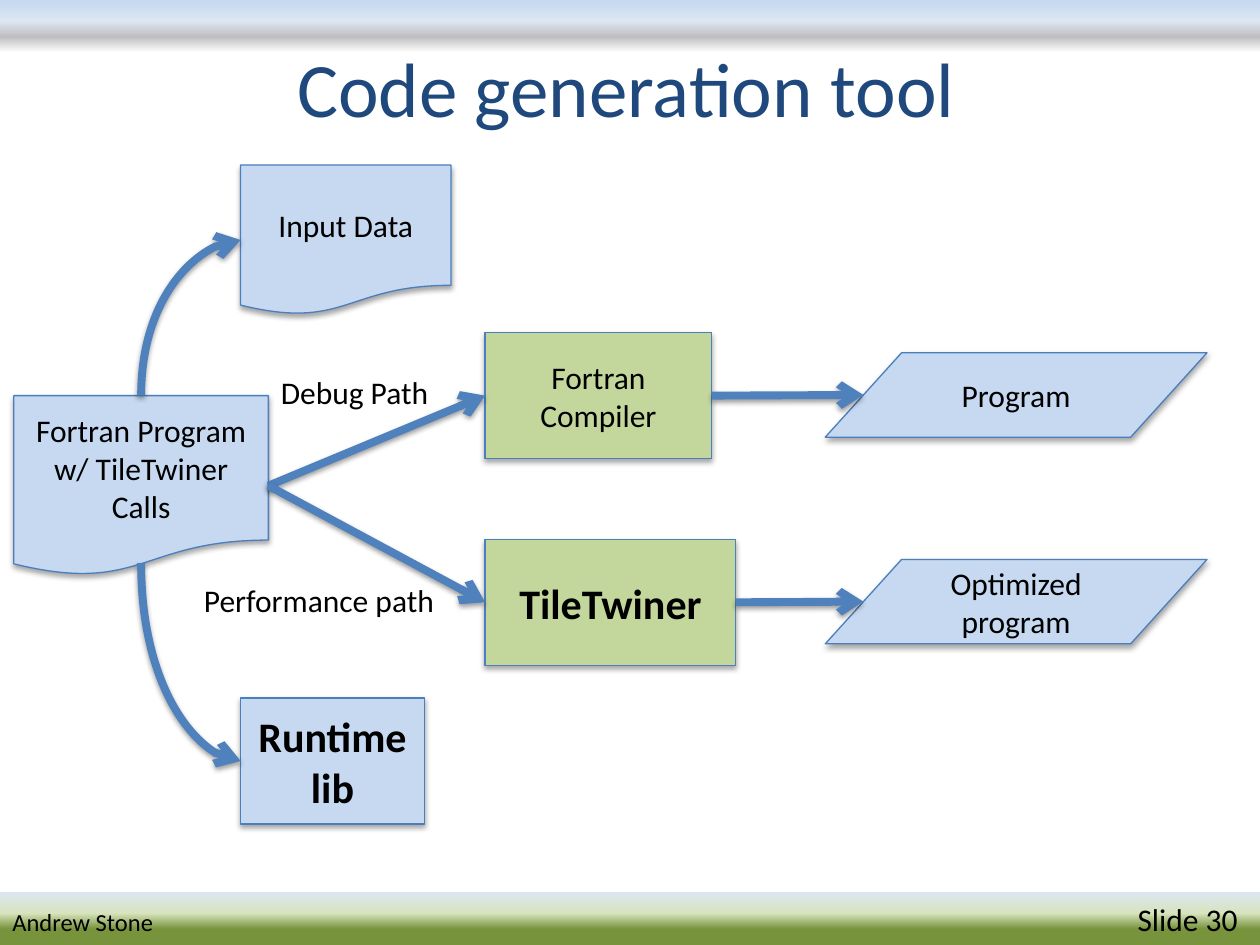
from lxml import etree
from pptx import Presentation
from pptx.dml.color import RGBColor
from pptx.enum.shapes import MSO_CONNECTOR as LINK, MSO_SHAPE as SHAPE
from pptx.enum.text import MSO_ANCHOR as ANCHOR, MSO_AUTO_SIZE as FIT, PP_ALIGN as ALIGN
from pptx.oxml.ns import qn
from pptx.util import Emu, Inches, Pt

COLORS = {
    "title": "1F497D", "text": "000000", "data": "C6D9F1", "tool": "C3D69B",
    "outline": "4B7EBC", "arrow": "4F81BD", "shadow": "000000",
}
HEADER_STOPS = [(0, "C6D9F1"), (40, "DCE6F2"), (70, "BFBFBF"), (100, "FFFFFF")]
FOOTER_STOPS = [(0, "DCE6F2"), (40, "D7E4BD"), (70, "77933C")]
TOP, LEFT, BOTTOM, RIGHT = range(4)
SLANT_LEFT = 2  # connection site on the left edge of a parallelogram


def rgb(name):
    return RGBColor.from_string(COLORS[name])


def add_xml(parent, tag, **attributes):
    child = etree.SubElement(parent, qn(tag))
    for key, value in attributes.items():
        child.set(key, str(value))
    return child


def style_run(run, size, color="text", bold=False):
    run.font.name = "Calibri"
    run.font.size = Pt(size)
    run.font.bold = bold
    run.font.color.rgb = rgb(color)


def add_shadow(shape, distance, opacity):
    shape_properties = shape._element.spPr
    effects = shape_properties.find(qn("a:effectLst"))
    if effects is None:
        effects = add_xml(shape_properties, "a:effectLst")
    shadow = add_xml(effects, "a:outerShdw", blurRad=Pt(3.15), dist=Pt(distance),
                     dir=5400000, rotWithShape=0)
    color = add_xml(shadow, "a:srgbClr", val=COLORS["shadow"])
    add_xml(color, "a:alpha", val=opacity * 1000)


def add_band(slide, box, stops):
    """Add a borderless bar with a gradient running from top to bottom."""
    band = slide.shapes.add_shape(SHAPE.RECTANGLE, *map(Inches, box))
    band.shadow.inherit = False
    band.line.fill.background()
    band.fill.gradient()
    band.fill.gradient_angle = 270
    stop_list = band._element.spPr.find(".//" + qn("a:gsLst"))
    for old_stop in list(stop_list):
        stop_list.remove(old_stop)
    for position, color in stops:
        stop = add_xml(stop_list, "a:gs", pos=position * 1000)
        add_xml(stop, "a:srgbClr", val=color)
    return band


def add_footer(slide, box, author, number):
    frame = add_band(slide, box, FOOTER_STOPS).text_frame
    line = frame.paragraphs[0]
    line.alignment = ALIGN.LEFT
    tabs = add_xml(line._p.get_or_add_pPr(), "a:tabLst")
    add_xml(tabs, "a:tab", pos=Inches(8.93), algn="l")
    for text, size in ((author + "\t", 14), (number, 18)):
        run = line.add_run()
        run.text = text
        style_run(run, size)


def add_label(slide, box, text, size=18, color="text", centered=False):
    label = slide.shapes.add_textbox(*map(Inches, box))
    frame = label.text_frame
    frame.text = text
    frame.word_wrap = centered
    frame.auto_size = FIT.NONE if centered else FIT.SHAPE_TO_FIT_TEXT
    if centered:
        frame.vertical_anchor = ANCHOR.MIDDLE
        frame.paragraphs[0].alignment = ALIGN.CENTER
    style_run(frame.paragraphs[0].runs[0], size, color)


def add_node(slide, kind, box, text, fill="data", size=18, bold=False):
    node = slide.shapes.add_shape(kind, *map(Inches, box))
    node.shadow.inherit = False
    node.fill.solid()
    node.fill.fore_color.rgb = rgb(fill)
    node.line.color.rgb = rgb("outline")
    node.line.width = Pt(0.75)
    add_shadow(node, 1.8, 35)
    frame = node.text_frame
    frame.text = text
    frame.vertical_anchor = ANCHOR.MIDDLE
    frame.paragraphs[0].alignment = ALIGN.CENTER
    style_run(frame.paragraphs[0].runs[0], size, bold=bold)
    return node


def site_point(node, site):
    """Return the place of a connection site, allowing for wavy and slanted edges."""
    middle = node.top + node.height // 2
    if node.auto_shape_type == SHAPE.FLOWCHART_DATA:
        return node.left + node.width // 10, middle
    center = node.left + node.width // 2
    depth = 0.93 if node.auto_shape_type == SHAPE.FLOWCHART_DOCUMENT else 1
    return {
        TOP: (center, node.top),
        LEFT: (node.left, middle),
        BOTTOM: (center, node.top + int(node.height * depth)),
        RIGHT: (node.left + node.width, middle),
    }[site]


def style_arrow(arrow):
    arrow.line.color.rgb = rgb("arrow")
    arrow.line.width = Pt(4.5)
    add_xml(arrow.line._get_or_add_ln(), "a:tailEnd", type="arrow")
    add_shadow(arrow, 1.6, 38)


def add_straight_arrow(slide, source, target, target_site=LEFT):
    start, end = site_point(source, RIGHT), site_point(target, target_site)
    arrow = slide.shapes.add_connector(LINK.STRAIGHT, *start, *end)
    arrow.begin_connect(source, RIGHT)
    arrow.end_connect(target, target_site)
    arrow.begin_x, arrow.begin_y = start
    arrow.end_x, arrow.end_y = end
    style_arrow(arrow)


def add_curved_arrow(slide, source, source_site, target):
    """Add a quarter curve that leaves vertically and arrives horizontally."""
    (x1, y1), (x2, y2) = site_point(source, source_site), site_point(target, LEFT)
    width, height = abs(y2 - y1), x2 - x1
    left, top = (x1 + x2 - width) // 2, (y1 + y2 - height) // 2
    arrow = slide.shapes.add_connector(
        LINK.CURVE, Emu(left), Emu(top), Emu(left + width), Emu(top + height))
    shape_properties = arrow._element.spPr
    shape_properties.find(qn("a:prstGeom")).set("prst", "curvedConnector2")
    upward = y2 < y1
    transform = shape_properties.find(qn("a:xfrm"))
    transform.set("rot", "5400000" if upward else "16200000")
    transform.set("flipH", "1")
    if upward:
        transform.set("flipV", "1")
    style_arrow(arrow)


def add_flow(slide):
    document, data, box = SHAPE.FLOWCHART_DOCUMENT, SHAPE.FLOWCHART_DATA, SHAPE.RECTANGLE
    source = add_node(slide, document, (0.11, 3.14, 2.02, 1.43),
                      "Fortran Program w/ TileTwiner Calls")
    input_data = add_node(slide, document, (1.91, 1.31, 1.67, 1.19), "Input Data")
    program = add_node(slide, data, (6.55, 2.8, 3.03, 0.67), "Program")
    optimized = add_node(slide, data, (6.55, 4.44, 3.03, 0.67), "Optimized program")
    runtime = add_node(slide, box, (1.91, 5.54, 1.46, 1), "Runtime lib", size=24, bold=True)
    generator = add_node(slide, box, (3.85, 4.28, 1.99, 1), "TileTwiner", "tool", 24, True)
    compiler = add_node(slide, box, (3.85, 2.64, 1.8, 1), "Fortran Compiler", "tool")

    for tool, result in ((compiler, program), (generator, optimized)):
        add_straight_arrow(slide, source, tool)
        add_straight_arrow(slide, tool, result, SLANT_LEFT)
    add_curved_arrow(slide, source, TOP, input_data)
    add_curved_arrow(slide, source, BOTTOM, runtime)
    add_label(slide, (2.13, 2.91, 1.39, 0.4), "Debug Path")
    add_label(slide, (1.52, 4.56, 2.06, 0.4), "Performance path")


def main():
    deck = Presentation()
    deck.slide_width, deck.slide_height = Inches(10), Inches(7.5)
    slide = deck.slides.add_slide(deck.slide_layouts[6])
    add_band(slide, (0, 0, 10, 0.42), HEADER_STOPS)
    add_footer(slide, (0, 7.08, 10, 0.42), "Andrew Stone", "Slide 30")
    add_label(slide, (0.47, 0.06, 9, 1.25), "Code generation tool", 44, "title", centered=True)
    add_flow(slide)
    deck.save("out.pptx")


if __name__ == "__main__":
    main()
